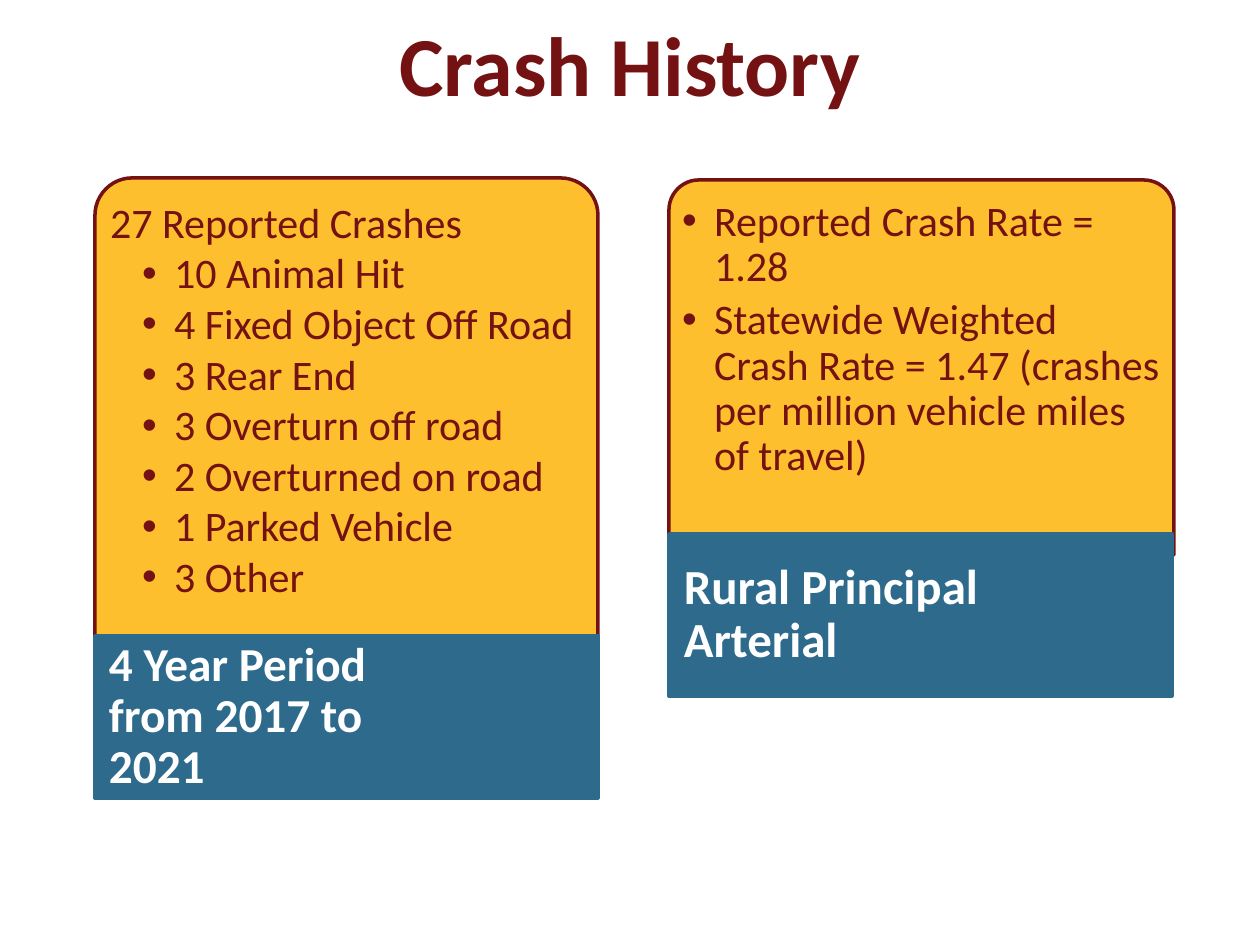
from dataclasses import dataclass

from lxml import etree
from pptx import Presentation
from pptx import util as u
from pptx.dml.color import RGBColor
from pptx.enum import shapes, text
from pptx.oxml.ns import qn

PX_PER_INCH = 126
COLORS = {"maroon": "741112", "gold": "FDB917", "blue": "2E6A8C", "white": "FFFFFF"}
FONT = "Calibri"
BULLET_INDENT = 32

Box = tuple[int, int, int, int]


@dataclass(frozen=True)
class Item:
    wording: str
    level: int = 1
    indent: int = BULLET_INDENT
    bullet: bool = True


@dataclass(frozen=True)
class Panel:
    card: Box
    list_box: Box
    list_top_inset: int
    items: list[Item]
    space_after: float
    bar: Box
    caption: str
    caption_size: int
    caption_inset: int


def px(value: float) -> u.Emu:
    return u.Emu(round(value * 914400 / PX_PER_INCH))


def rgb(name: str) -> RGBColor:
    return RGBColor.from_string(COLORS[name])


def place(shape, box: Box) -> None:
    shape.left, shape.top, shape.width, shape.height = map(px, box)


def set_frame(frame, insets: Box, anchor) -> None:
    frame.word_wrap = True
    frame.auto_size = text.MSO_AUTO_SIZE.NONE
    frame.vertical_anchor = anchor
    (frame.margin_left, frame.margin_top,
     frame.margin_right, frame.margin_bottom) = map(px, insets)


def write(paragraph, wording: str, *, size: int, color: str, bold: bool = False,
          align=text.PP_ALIGN.LEFT, line_spacing: float = 0.9, after: float = 0) -> None:
    paragraph.alignment = align
    paragraph.line_spacing = line_spacing
    paragraph.space_before = u.Pt(0)
    paragraph.space_after = u.Pt(after)
    run = paragraph.add_run()
    run.text = wording
    run.font.name, run.font.size, run.font.bold = FONT, u.Pt(size), bold
    run.font.color.rgb = rgb(color)


def set_bullet(paragraph, item: Item) -> None:
    paragraph.level = item.level
    props = paragraph._p.get_or_add_pPr()
    props.set("marL", str(px(item.indent)))
    props.set("indent", str(-px(BULLET_INDENT)))
    if item.bullet:
        etree.SubElement(props, qn("a:buFont")).set("typeface", "Arial")
        etree.SubElement(props, qn("a:buChar")).set("char", "•")
    else:
        etree.SubElement(props, qn("a:buNone"))


def add_block(slide, kind, box: Box, fill: str, line: str):
    block = slide.shapes.add_shape(kind, *map(px, box))
    block.shadow.inherit = False
    block.fill.solid()
    block.fill.fore_color.rgb = rgb(fill)
    block.line.color.rgb = rgb(line)
    block.line.width = u.Pt(2)
    return block


def draw_panel(slide, panel: Panel, body) -> None:
    # Card with rounded top corners, slightly transparent
    card = add_block(slide, shapes.MSO_SHAPE.ROUND_2_SAME_RECTANGLE,
                     panel.card, "gold", "maroon")
    card.adjustments[0] = 0.08
    card.adjustments[1] = 0
    gold = card.element.spPr.find(qn("a:solidFill")).find(qn("a:srgbClr"))
    etree.SubElement(gold, qn("a:alpha")).set("val", "90000")

    # List, brought in front of its card
    slide.shapes.element.append(body.element)
    place(body, panel.list_box)
    frame = body.text_frame
    set_frame(frame, (4, panel.list_top_inset, 4, 4), text.MSO_ANCHOR.TOP)
    for index, item in enumerate(panel.items):
        paragraph = frame.add_paragraph() if index else frame.paragraphs[0]
        set_bullet(paragraph, item)
        write(paragraph, item.wording, size=24, color="maroon", after=panel.space_after)

    # Caption bar, whose wording keeps to the left part
    add_block(slide, shapes.MSO_SHAPE.RECTANGLE, panel.bar, "blue", "blue")
    left, top, _, height = panel.bar
    caption = slide.shapes.add_textbox(*map(px, (left, top, 354, height)))
    set_frame(caption.text_frame, (panel.caption_inset, 0, 5, 0), text.MSO_ANCHOR.MIDDLE)
    write(caption.text_frame.paragraphs[0], panel.caption,
          size=panel.caption_size, color="white", bold=True)


CRASH_TYPES = ["10 Animal Hit", "4 Fixed Object Off Road", "3 Rear End",
               "3 Overturn off road", "2 Overturned on road", "1 Parked Vehicle",
               "3 Other"]
PANELS = [
    Panel(card=(95, 178, 503, 466), list_box=(106, 189, 481, 456), list_top_inset=13,
          items=[Item("27 Reported Crashes", bullet=False)]
          + [Item(name, level=2, indent=2 * BULLET_INDENT) for name in CRASH_TYPES],
          space_after=3, bar=(95, 636, 503, 162),
          caption="4 Year Period from 2017 to 2021", caption_size=27, caption_inset=14),
    Panel(card=(669, 180, 505, 375), list_box=(678, 189, 486, 367), list_top_inset=11,
          items=[Item("Reported Crash Rate = 1.28"),
                 Item("Statewide Weighted Crash Rate = 1.47 (crashes per million "
                      "vehicle miles of travel)")],
          space_after=4.4, bar=(669, 534, 503, 162),
          caption="Rural Principal Arterial", caption_size=28, caption_inset=15),
]


def main() -> None:
    deck = Presentation()
    deck.slide_width, deck.slide_height = u.Inches(10), u.Inches(7.5)
    slide = deck.slides.add_slide(deck.slide_layouts[3])
    title, *bodies = slide.placeholders

    # Title
    place(title, (63, 0, 1134, 126))
    set_frame(title.text_frame, (13, 6, 13, 6), text.MSO_ANCHOR.MIDDLE)
    write(title.text_frame.paragraphs[0], "Crash History", size=48, color="maroon",
          bold=True, align=text.PP_ALIGN.CENTER, line_spacing=1)

    # Panels; the leftover date, footer and number holders are not on the slide
    for panel, body in zip(PANELS, bodies):
        draw_panel(slide, panel, body)

    deck.save("out.pptx")


if __name__ == "__main__":
    main()
